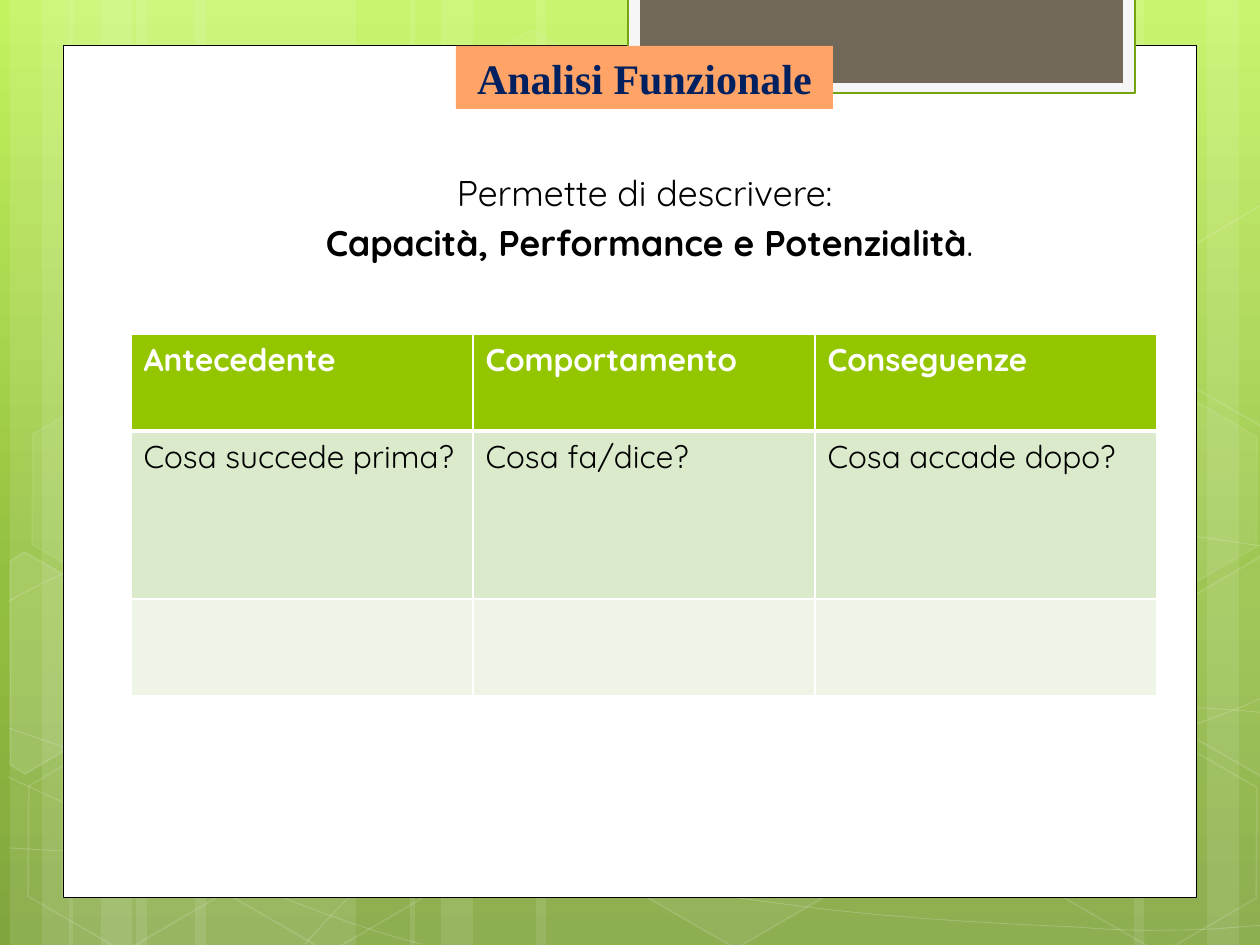
"""Build the slide that presents the functional analysis table."""
import copy
import math

from lxml import etree
from pptx import Presentation
from pptx import util as u
from pptx.dml.color import RGBColor
from pptx.enum import shapes, text
from pptx.oxml import ns

SCALE = 914400 / 126
WIDTH, HEIGHT = 1260, 945
TILT = 30
COLOURS = {
    "white": "FFFFFF", "black": "000000", "navy": "002060", "orange": "FFA466",
    "frame": "F5F5F5", "frame_line": "74A510", "taupe": "71685A",
    "header": "94C600", "band": "DCEACC", "pale": "EEF5E7",
}
GRADIENT = [(0, "C3F35F"), (0.62, "93BF3F"), (1, "81A53E")]
STRIPES = [(136, 220, 0), (10, 63, 0), (42, 105, 0), (195, 220, 0), (69, 63, 0),
           (101, 105, 0), (924, 220, 180), (1207, 63, 180), (1134, 105, 180),
           (536, 388, 0), (410, 63, 0), (441, 105, 0)]
CURVES = [
    [(9, 848), (77, 852, 145, 856, 239, 854), (334, 853, 451, 851, 577, 838),
     (703, 825, 882, 801, 998, 777), (1113, 753, 1231, 716, 1269, 694)],
    [(9, 601), (45, 581, 82, 562, 152, 543), (224, 524, 326, 496, 437, 488),
     (549, 479, 685, 478, 824, 488), (963, 498, 1193, 537, 1269, 547)],
    [(8, 777), (160, 847, 311, 916, 421, 944)],
    [(9, 728), (48, 742, 88, 756, 161, 776), (234, 795, 344, 827, 450, 848),
     (554, 869, 687, 892, 791, 905), (896, 919, 1008, 924, 1075, 927),
     (1140, 932, 1158, 930, 1191, 930), (1223, 929, 1246, 926, 1269, 925)],
    [(305, 944), (328, 919, 350, 893, 381, 871), (411, 848, 454, 823, 489, 805),
     (524, 788, 546, 780, 592, 767), (638, 754, 722, 737, 766, 728),
     (811, 719, 818, 719, 857, 717), (896, 713, 958, 709, 1000, 708),
     (1045, 707, 1116, 708, 1116, 708), (1201, 708),
     (1223, 709, 1245, 711, 1256, 712), (1268, 713, 1264, 712, 1268, 713)],
]
HEXAGONS = [(421, 45, 4, 8), (626, 742, 6, 12), (14, 745, 0, 12), (18, 393, 7, 8),
            (219, 746, 0, 12), (949, 571, 10, 12), (1051, 747, 0, 12), (1051, 396, 7, 8)]
CUT_HEXAGONS = [
    ((45, 674), [(10, 561), (24, 552), (121, 607), (120, 718), (25, 774), (10, 765)], 10),
    ((1241, 655), [(1167, 611), (1261, 556), (1271, 562), (1271, 772), (1263, 777),
                   (1167, 722)], 4),
    ((1241, 304), [(1167, 261), (1261, 205), (1273, 212), (1271, 422), (1263, 427),
                   (1167, 372)], 0),
]
ROWS = [
    (97, "header", "white", True, ["Antecedente", "Comportamento", "Conseguenze"]),
    (168, "band", "black", False, ["Cosa succede prima?", "Cosa fa/dice?", "Cosa accade dopo?"]),
    (97, "pale", "black", False, ["", "", ""]),
]


def px(length):
    """Turn pixels into EMU."""
    return u.Emu(round(length * SCALE))


def rgb(name):
    """Look up a named colour."""
    return RGBColor.from_string(COLOURS[name])


def set_all(target, values):
    """Set attributes from a dict."""
    for name, value in values.items():
        setattr(target, name, value)


def set_alpha(shape, route, percent):
    """Make the colour found at the route partly transparent."""
    for colour in shape.element.xpath(route):
        if percent < 100:
            etree.SubElement(colour, ns.qn("a:alpha"), val=str(percent * 1000))


def paint(shape, fill=None, line=None, width=1, fill_alpha=100, line_alpha=100):
    """Give a shape its fill and outline without a shadow."""
    shape.shadow.inherit = False
    if fill and fill_alpha:
        shape.fill.solid()
        shape.fill.fore_color.rgb = rgb(fill)
        set_alpha(shape, "./p:spPr/a:solidFill/a:srgbClr", fill_alpha)
    else:
        shape.fill.background()
    if line:
        shape.line.color.rgb = rgb(line)
        shape.line.width = u.Pt(width)
        set_alpha(shape, "./p:spPr/a:ln/a:solidFill/a:srgbClr", line_alpha)
    else:
        shape.line.fill.background()


def add_preset(page, kind, frame, **style):
    """Add a painted preset shape."""
    shape = page.shapes.add_shape(kind, *map(px, frame))
    paint(shape, **style)
    return shape


def add_outline(page, points, close, **style):
    """Add a painted freeform through the points."""
    places = [(px(x), px(y)) for x, y in points]
    builder = page.shapes.build_freeform(*places[0])
    builder.add_line_segments(places[1:], close=close)
    shape = builder.convert_to_shape()
    paint(shape, **style)
    return shape


def add_curve(page, curve):
    """Add a thin open line of cubic and straight segments."""
    points = [pair for segment in curve for pair in zip(segment[::2], segment[1::2])]
    shape = add_outline(page, points, False, line="white", width=0.5, line_alpha=20)
    steps = iter(shape.element.xpath(".//a:lnTo"))
    for segment in curve[1:]:
        group = [next(steps) for _ in segment[::2]]
        if len(group) == 3:
            bend = etree.Element(ns.qn("a:cubicBezTo"))
            group[0].addprevious(bend)
            for step in group:
                bend.append(step[0])
                step.getparent().remove(step)


def add_hexagon(page, left, top, fill_alpha, line_alpha):
    """Add a tilted translucent hexagon."""
    hexagon = add_preset(page, shapes.MSO_SHAPE.HEXAGON, (left, top, 220, 192),
                         fill="white", line="white",
                         fill_alpha=fill_alpha, line_alpha=line_alpha)
    hexagon.rotation = TILT
    hexagon.adjustments[0] = 0.285


def add_cut_hexagon(page, centre, points, fill_alpha):
    """Add a tilted hexagon that is cut at the slide edge."""
    turn = math.radians(-TILT)
    cos, sin = math.cos(turn), math.sin(turn)
    upright = [(centre[0] + (x - centre[0]) * cos - (y - centre[1]) * sin,
                centre[1] + (x - centre[0]) * sin + (y - centre[1]) * cos)
               for x, y in points]
    shape = add_outline(page, upright, True, fill="white", line="white",
                        fill_alpha=fill_alpha, line_alpha=12)
    shape.rotation = TILT


def add_span(para, words, colour, size, bold=False, name="Quicksand"):
    """Add formatted words to a paragraph."""
    span = para.add_run()
    span.text = words
    set_all(span.font, {"name": name, "size": u.Pt(size), "bold": bold})
    span.font.color.rgb = rgb(colour)


def add_background(page):
    """Fill the background with the green gradient."""
    fill = page.background.fill
    fill.gradient()
    fill.gradient_angle = 270
    last = page.element.xpath(".//a:gs")[-1]
    last.addnext(copy.deepcopy(last))
    for stop, (position, colour) in zip(fill.gradient_stops, GRADIENT):
        stop.color.rgb = RGBColor.from_string(colour)
        stop.position = position


def add_decoration(page):
    """Add the translucent stripes, curves and hexagons."""
    for left, width, turn in STRIPES:
        stripe = add_preset(page, shapes.MSO_SHAPE.RECTANGLE, (left, 0, width, HEIGHT),
                            fill="white", fill_alpha=10)
        stripe.rotation = turn
    for curve in CURVES:
        add_curve(page, curve)
    for hexagon in HEXAGONS[:2]:
        add_hexagon(page, *hexagon)
    add_cut_hexagon(page, *CUT_HEXAGONS[0])
    for hexagon in HEXAGONS[2:]:
        add_hexagon(page, *hexagon)
    for hexagon in CUT_HEXAGONS[1:]:
        add_cut_hexagon(page, *hexagon)


def add_panels(page):
    """Add the white sheet and the tab at its top."""
    kind = shapes.MSO_SHAPE.RECTANGLE
    add_preset(page, kind, (63, 45, 1134, 853), fill="white", line="black", width=0.5)
    add_preset(page, kind, (628, -3, 507, 96), fill="frame", line="frame_line", width=1.25)
    add_preset(page, kind, (640, -3, 483, 86), fill="taupe")


def add_subtitle(page):
    """Add the two centred lines above the table."""
    box = page.shapes.add_textbox(*map(px, (134, 165, 1022, 89)))
    box.text_frame.word_wrap = True
    first, second = box.text_frame.paragraphs[0], box.text_frame.add_paragraph()
    for para in (first, second):
        set_all(para, {"alignment": text.PP_ALIGN.CENTER, "space_before": u.Pt(4)})
        para._p.get_or_add_pPr().set("marL", str(px(9)))
    add_span(first, "Permette di descrivere: ", "black", 20.4)
    add_span(second, "Capacità, Performance e Potenzialità", "black", 20.4, True)
    add_span(second, ".", "black", 20.4)


def add_title(page):
    """Add the orange title label."""
    label = add_preset(page, shapes.MSO_SHAPE.RECTANGLE, (456, 46, 377, 63), fill="orange")
    set_all(label.text_frame, {"word_wrap": True, "vertical_anchor": text.MSO_ANCHOR.MIDDLE})
    para = label.text_frame.paragraphs[0]
    para.alignment = text.PP_ALIGN.CENTER
    add_span(para, "Analisi Funzionale", "navy", 24, True, "Times New Roman")


def add_borders(cell, widths):
    """Draw white borders on the left, right, top and bottom of a cell."""
    properties = cell._tc.get_or_add_tcPr()
    for index, (side, width) in enumerate(zip("LRTB", widths)):
        line = etree.Element(ns.qn(f"a:ln{side}"), w=str(u.Pt(width)))
        fill = etree.SubElement(line, ns.qn("a:solidFill"))
        etree.SubElement(fill, ns.qn("a:srgbClr"), val=COLOURS["white"])
        properties.insert(index, line)


def add_grid(page):
    """Add the table of antecedent, behaviour and consequences."""
    frame = page.shapes.add_table(len(ROWS), 3, *map(px, (131, 334, 1026, 362)))
    table = frame.table
    for column in table.columns:
        column.width = px(342)
    for row, (height, fill, colour, bold, words) in enumerate(ROWS):
        table.rows[row].height = px(height)
        for column, label in enumerate(words):
            cell = table.cell(row, column)
            cell.fill.solid()
            cell.fill.fore_color.rgb = rgb(fill)
            add_borders(cell, (1, 1, 3 if row == 1 else 1, 3 if row == 0 else 1))
            if label:
                add_span(cell.text_frame.paragraphs[0], label, colour, 18, bold)


def main():
    """Build and save the deck."""
    deck = Presentation()
    set_all(deck, {"slide_width": px(WIDTH), "slide_height": px(HEIGHT)})
    page = deck.slides.add_slide(deck.slide_layouts[6])
    for add_part in (add_background, add_decoration, add_panels,
                     add_subtitle, add_title, add_grid):
        add_part(page)
    deck.save("out.pptx")


if __name__ == "__main__":
    main()
